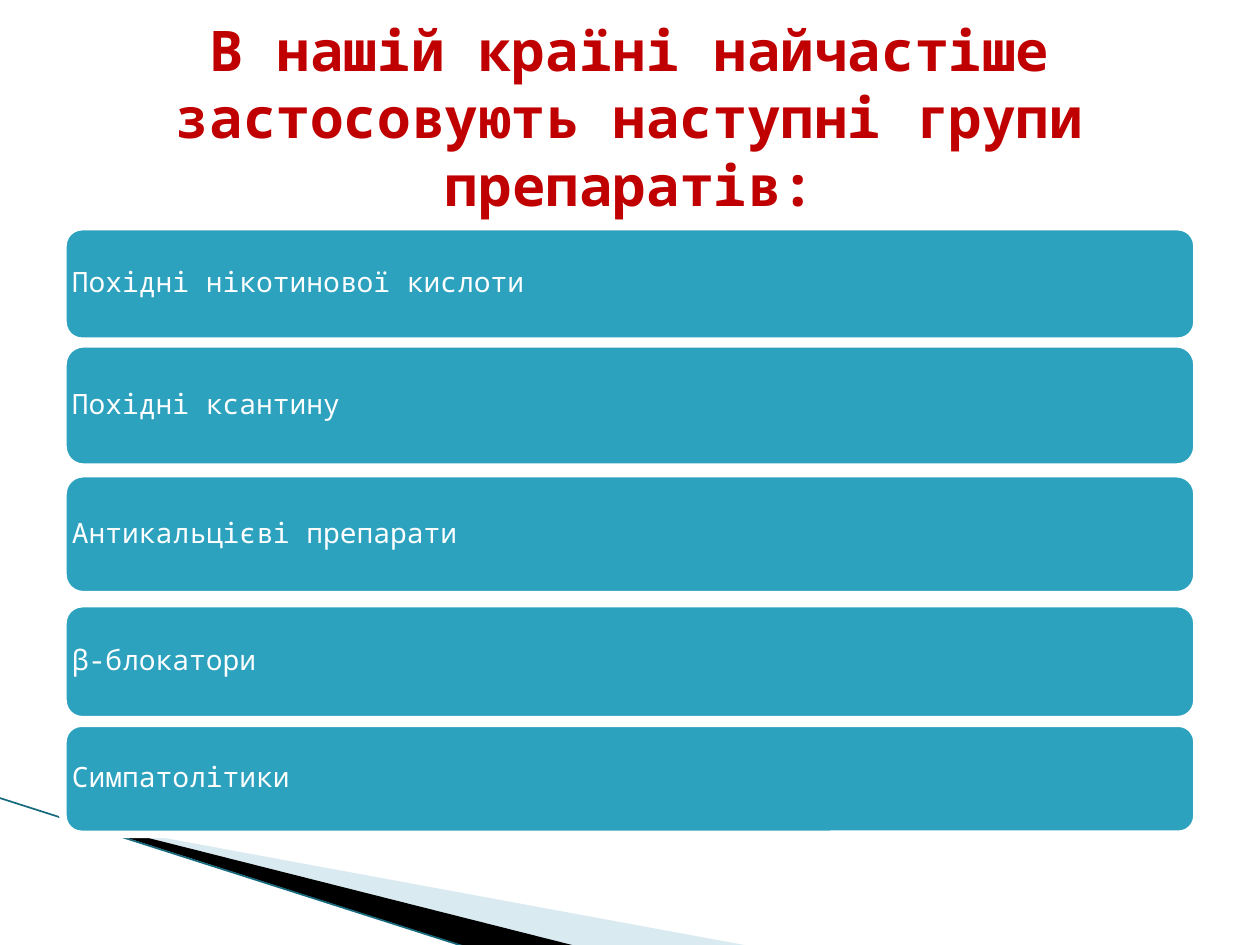
from lxml import etree
from pptx import Presentation
from pptx.dml.color import RGBColor
from pptx.enum import shapes, text
from pptx.oxml import ns
from pptx.util import Cm, Pt

FONT = "Noto Sans Mono"
TITLE = "В нашій країні найчастіше застосовують наступні групи препаратів:"
# Drug group, top and height of its bar in cm
GROUPS = [
    ("Похідні нікотинової кислоти", 4.57, 2.31),
    ("Похідні ксантину", 6.93, 2.49),
    ("Антикальцієві препарати", 9.55, 2.44),
    ("β-блокатори", 12.17, 2.34),
    ("Симпатолітики", 14.58, 2.24),
]
# Corner wedges: points in cm, fill, opacity in percent
WEDGES = [
    ([(1.4, 16.54), (15.11, 19.07), (11.58, 19.07), (1.4, 16.51)], "A0CBDC", 40),
    ([(1.35, 16.48), (11.61, 19.07), (9.45, 19.1), (1.37, 16.51)], "000000", 100),
]
LEFT, WIDTH = 1.27, 22.86
TEXT_MARGIN = 0.18
CORNER_INSET = 0.29 / 6  # text inset of a rounded rectangle, per unit of height


def rgb(value):
    return RGBColor.from_string(value)


def write(tf, content, size, color, bold=False, align=text.PP_ALIGN.LEFT, spacing=1.0):
    tf.word_wrap = True
    tf.auto_size = text.MSO_AUTO_SIZE.NONE
    tf.vertical_anchor = text.MSO_ANCHOR.MIDDLE
    p = tf.paragraphs[0]
    p.alignment, p.line_spacing = align, spacing
    r = p.add_run()
    r.text = content
    r.font.name, r.font.size, r.font.bold = FONT, Pt(size), bold
    r.font.color.rgb = rgb(color)


def add_wedge(s, points, color, opacity):
    builder = s.shapes.build_freeform(*map(Cm, points[0]))
    builder.add_line_segments([(Cm(x), Cm(y)) for x, y in points[1:]])
    sp = builder.convert_to_shape()
    sp.shadow.inherit = False
    sp.line.fill.background()
    sp.fill.solid()
    sp.fill.fore_color.rgb = rgb(color)
    if opacity < 100:
        fill = sp.fill._xPr.find(ns.qn("a:solidFill"))
        etree.SubElement(fill[0], ns.qn("a:alpha"), val=str(opacity * 1000))


def add_bar(s, label, top, height):
    sp = s.shapes.add_shape(shapes.MSO_SHAPE.ROUNDED_RECTANGLE,
                            Cm(LEFT), Cm(top), Cm(WIDTH), Cm(height))
    sp.shadow.inherit = False
    sp.fill.solid()
    sp.fill.fore_color.rgb = rgb("2DA2BF")
    sp.line.color.rgb = rgb("FFFFFF")
    sp.line.width = Pt(4.33)
    tf = sp.text_frame
    tf.margin_left = tf.margin_right = Cm(TEXT_MARGIN - CORNER_INSET * height)
    tf.margin_top = tf.margin_bottom = tf.margin_left
    write(tf, label, 16, "FFFFFF", spacing=0.9)


def main():
    prs = Presentation()
    prs.slide_width, prs.slide_height = Cm(25.4), Cm(19.05)
    s = prs.slides.add_slide(prs.slide_layouts[5])

    title = s.shapes.title
    title.left, title.top, title.width, title.height = Cm(LEFT), Cm(0.76), Cm(WIDTH), Cm(3.18)
    write(title.text_frame, TITLE, 32, "C00000", bold=True, align=text.PP_ALIGN.CENTER)

    for wedge in WEDGES:
        add_wedge(s, *wedge)
    edge = s.shapes.add_connector(shapes.MSO_CONNECTOR.STRAIGHT,
                                  Cm(-0.03), Cm(16.08), Cm(9.42), Cm(19.1))
    edge.line.color.rgb = rgb("16697D")
    edge.line.width = Pt(0.95)
    etree.SubElement(edge._element.spPr, ns.qn("a:effectLst"))

    for group in GROUPS:
        add_bar(s, *group)
    prs.save("out.pptx")


if __name__ == "__main__":
    main()
